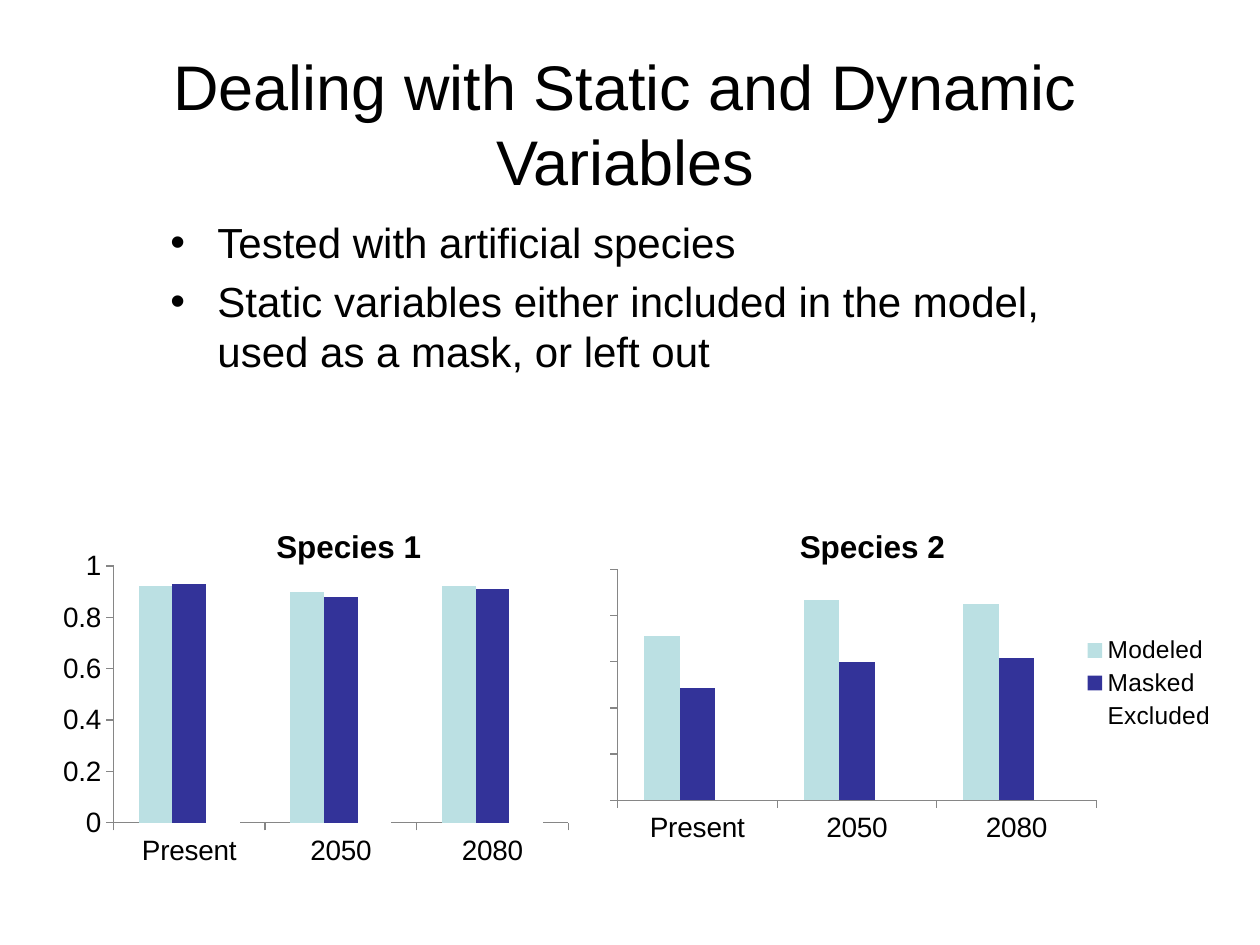
from lxml import etree
from pptx import Presentation
from pptx.chart.data import CategoryChartData
from pptx.dml.color import RGBColor
from pptx.enum.chart import XL_CHART_TYPE, XL_LEGEND_POSITION, XL_TICK_LABEL_POSITION, XL_TICK_MARK
from pptx.enum.text import MSO_ANCHOR, MSO_AUTO_SIZE, PP_ALIGN
from pptx.oxml.ns import qn
from pptx.util import Cm, Pt

COLUMNS = XL_CHART_TYPE.COLUMN_CLUSTERED
RIGHT = XL_LEGEND_POSITION.RIGHT
NO_LABELS = XL_TICK_LABEL_POSITION.NONE
OUTSIDE = XL_TICK_MARK.OUTSIDE
CENTER, LEFT = PP_ALIGN.CENTER, PP_ALIGN.LEFT
MIDDLE, TOP = MSO_ANCHOR.MIDDLE, MSO_ANCHOR.TOP
NO_FIT = MSO_AUTO_SIZE.NONE

BLACK = RGBColor(0, 0, 0)
GRAY = RGBColor(0x86, 0x86, 0x86)
SERIES_COLORS = [RGBColor(0xBB, 0xE0, 0xE3), RGBColor(0x33, 0x33, 0x99), RGBColor(0xFF, 0xFF, 0xFF)]
FONT = "Arial"

TITLE = "Dealing with Static and Dynamic Variables"
BULLETS = [
    "Tested with artificial species",
    "Static variables either included in the model, used as a mask, or left out",
]
PERIODS = ["Present", "2050", "2080"]
CHARTS = [
    dict(title="Species 1", box=(1.27, 9.96, 10.95, 7.62), title_at=(0.38, 0.07),
         plot=(0.09, 0.19, 0.84, 0.68), top=1, step=0.2, labels=True, legend=False,
         series={"Series 1": (0.92, 0.9, 0.92), "Series 2": (0.93, 0.88, 0.91),
                 "Series 3": (0.69, 0.59, 0.5)}),
    dict(title="Species 2", box=(12.07, 9.96, 12.7, 7.62), title_at=(0.31, 0.07),
         plot=(0.03, 0.2, 0.76, 0.61), top=115, step=23, labels=False, legend=True,
         series={"Modeled": (82, 100, 98), "Masked": (56, 69, 71),
                 "Excluded": (43, 55, 48)}),
]


def set_font(font, size, bold=False):
    font.name, font.size, font.bold = FONT, Pt(size), bold
    font.color.rgb = BLACK


def fill_placeholder(sp, lines, box, size, align, anchor, bullet=False):
    sp.left, sp.top, sp.width, sp.height = map(Cm, box)
    tf = sp.text_frame
    tf.text = "\n".join(lines)
    tf.auto_size, tf.word_wrap, tf.vertical_anchor = NO_FIT, True, anchor
    for p in tf.paragraphs:
        p.alignment = align
        set_font(p.runs[0].font, size)
        if bullet:
            p.space_before = Pt(size * 0.2)
            pPr = p._p.get_or_add_pPr()
            pPr.set("marL", str(Cm(0.95)))
            pPr.set("indent", str(-Cm(0.95)))
            etree.SubElement(pPr, qn("a:buChar")).set("char", "•")


def set_layout(parent, index, values, inner=False):
    for old in parent.findall(qn("c:layout")):
        parent.remove(old)
    layout = etree.Element(qn("c:layout"))
    manual = etree.SubElement(layout, qn("c:manualLayout"))
    settings = [("layoutTarget", "inner")] if inner else []
    settings += [("xMode", "edge"), ("yMode", "edge"), *zip("xywh", values)]
    for tag, value in settings:
        etree.SubElement(manual, qn("c:" + tag)).set("val", str(value))
    parent.insert(index, layout)


def add_species_chart(s, title, box, title_at, plot, top, step, labels, legend, series):
    data = CategoryChartData()
    data.categories = PERIODS
    for name, values in series.items():
        data.add_series(name, values)
    chart = s.shapes.add_chart(COLUMNS, *map(Cm, box), data).chart
    set_font(chart.font, 10)

    chart.has_title = True
    tf = chart.chart_title.text_frame
    tf.text = title
    set_font(tf.paragraphs[0].runs[0].font, 18, bold=True)
    chart.chart_title.include_in_layout = False
    set_layout(chart.chart_title._element, 1, title_at)
    set_layout(chart._chartSpace.chart.plotArea, 0, plot, inner=True)

    bars = chart.plots[0]
    bars.gap_width, bars.overlap, bars.vary_by_categories = 150, 0, False
    for ser, color in zip(bars.series, SERIES_COLORS):
        ser.format.fill.solid()
        ser.format.fill.fore_color.rgb = color

    for axis in (chart.category_axis, chart.value_axis):
        axis.has_major_gridlines = False
        axis.major_tick_mark = OUTSIDE
        axis.format.line.color.rgb = GRAY
        axis.format.line.width = Pt(0.75)
        set_font(axis.tick_labels.font, 16)
    axis = chart.value_axis
    axis.minimum_scale, axis.maximum_scale, axis.major_unit = 0, top, step
    if not labels:
        axis.tick_label_position = NO_LABELS

    chart.has_legend = legend
    if legend:
        chart.legend.position = RIGHT
        chart.legend.include_in_layout = False
        set_font(chart.legend.font, 14)


def main():
    prs = Presentation()
    prs.slide_width, prs.slide_height = Cm(25.4), Cm(19.05)
    s = prs.slides.add_slide(prs.slide_layouts[1])
    fill_placeholder(s.shapes.title, [TITLE], (2.34, 0, 20.52, 4.95), 36, CENTER, MIDDLE)
    fill_placeholder(s.placeholders[1], BULLETS, (3.18, 4.24, 19.68, 5.08), 24, LEFT, TOP, bullet=True)
    for chart in CHARTS:
        add_species_chart(s, **chart)
    prs.save("out.pptx")


if __name__ == "__main__":
    main()
